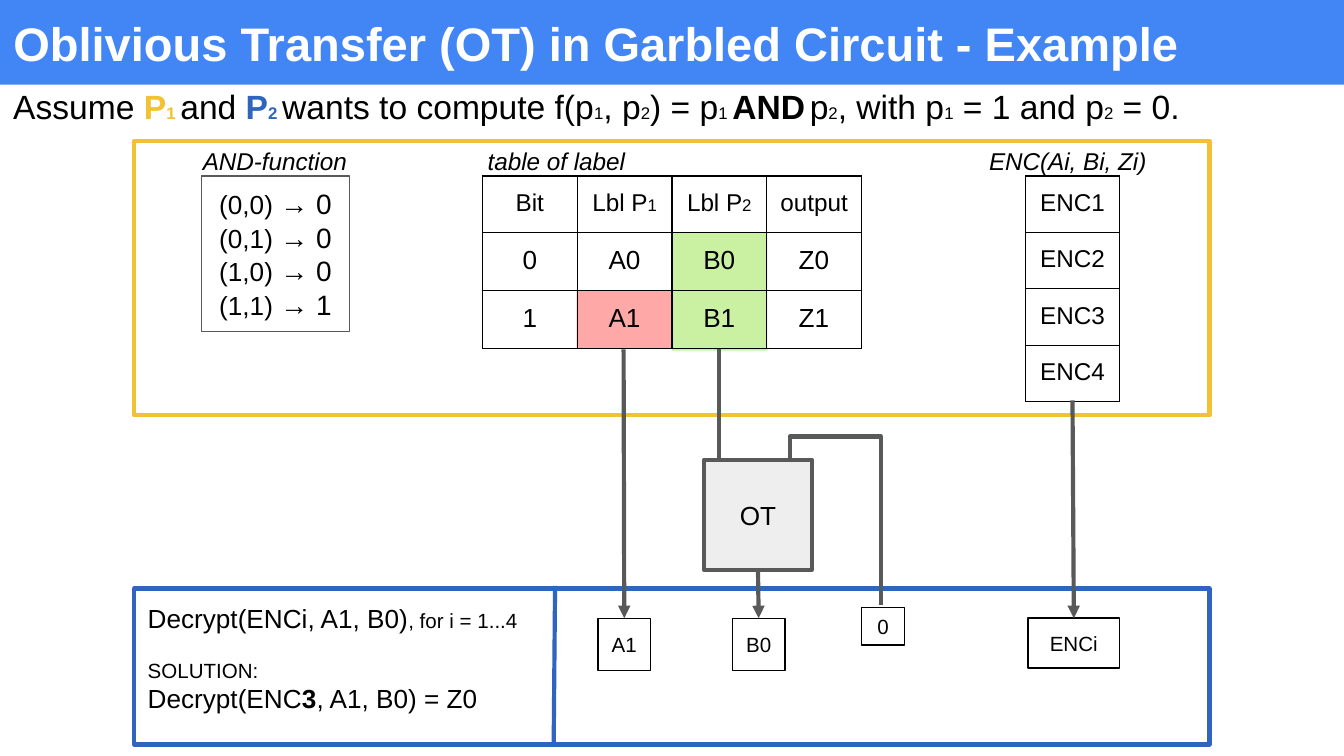
"""Build the slide on oblivious transfer in a garbled circuit."""
from typing import NamedTuple, Optional

from lxml.etree import SubElement as Sub
from pptx import Presentation
from pptx.dml.color import RGBColor
from pptx.enum.shapes import MSO_CONNECTOR as Link, MSO_SHAPE as Form
from pptx.enum.text import MSO_ANCHOR as Anchor, MSO_AUTO_SIZE as Auto, PP_ALIGN as Align
from pptx.oxml.ns import qn
from pptx.util import Inches, Pt

BLACK, GRAY, GOLD, BLUE = "000000", "595959", "F1C232", "2F65BE"


class Run(NamedTuple):
    text: str
    size: float = 14
    color: str = BLACK
    bold: bool = False
    slant: bool = False


class Box(NamedTuple):
    x: float
    y: float
    w: float
    h: float
    line: Optional[str] = None
    width: float = 0.75
    fill: Optional[str] = None
    alpha: int = 100
    rows: tuple = ()


class Grid(NamedTuple):
    x: float
    y: float
    wide: float
    tall: tuple
    cells: list


def hue(code: str) -> RGBColor:
    return RGBColor.from_string(code)


def style(font, run: Run) -> None:
    font.name, font.size = "Arial", Pt(run.size)
    font.bold, font.italic = run.bold, run.slant
    font.color.rgb = hue(run.color)


def write(frame, rows, align=Align.LEFT) -> None:
    frame.margin_left = frame.margin_right = Inches(0.1)
    frame.margin_top = frame.margin_bottom = Inches(0.1)
    for i, runs in enumerate(rows):
        para = frame.paragraphs[0] if i == 0 else frame.add_paragraph()
        para.alignment = align
        if len(runs) == 1:
            style(para.font, runs[0])
        for run in runs:
            part = para.add_run()
            part.text = run.text
            if len(runs) > 1:
                style(part.font, run)


def draw_box(slide, box: Box):
    shape = slide.shapes.add_shape(Form.RECTANGLE, *map(Inches, box[:4]))
    shape.shadow.inherit = False
    if box.fill:
        shape.fill.solid()
        shape.fill.fore_color.rgb = hue(box.fill)
        if box.alpha < 100:
            tint = shape.element.spPr.find(".//" + qn("a:srgbClr"))
            Sub(tint, qn("a:alpha"), val=str(box.alpha * 1000))
    else:
        shape.fill.background()
    if box.line:
        shape.line.color.rgb = hue(box.line)
        shape.line.width = Pt(box.width)
    else:
        shape.line.fill.background()
    if box.rows:
        frame = shape.text_frame
        frame.word_wrap = False
        frame.vertical_anchor = Anchor.MIDDLE
        write(frame, box.rows, Align.CENTER)
    return shape


def draw_text(slide, x: float, y: float, w: float, h: float, rows):
    frame = slide.shapes.add_textbox(*map(Inches, (x, y, w, h))).text_frame
    frame.word_wrap = True
    write(frame, rows)
    return frame


def draw_grid(slide, grid: Grid) -> None:
    count = len(grid.cells[0])
    size = (grid.x, grid.y, grid.wide * count, sum(grid.tall))
    table = slide.shapes.add_table(len(grid.tall), count, *map(Inches, size)).table
    table.first_row = table.horz_banding = False
    for col in table.columns:
        col.width = Inches(grid.wide)
    for row, tall, line in zip(table.rows, grid.tall, grid.cells):
        row.height = Inches(tall)
        for cell, runs in zip(row.cells, line):
            write(cell.text_frame, [runs], Align.CENTER)
            cell.margin_left = cell.margin_right = Inches(0.1)
            cell.margin_top = cell.margin_bottom = Inches(0.1)
            props = cell._tc.get_or_add_tcPr()
            for side in ("lnL", "lnR", "lnT", "lnB"):
                edge = Sub(props, qn("a:" + side), w=str(Pt(0.75)))
                Sub(Sub(edge, qn("a:solidFill")), qn("a:srgbClr"), val=BLACK)
            cell.fill.background()


def draw_line(slide, x: float, y: float, to_x: float, to_y: float,
              color: str = GRAY, arrow: bool = False, kind=Link.STRAIGHT):
    line = slide.shapes.add_connector(kind, *map(Inches, (x, y, to_x, to_y)))
    line.line.color.rgb = hue(color)
    line.line.width = Pt(2.25)
    props = line.element.spPr
    if arrow:
        Sub(props.find(qn("a:ln")), qn("a:tailEnd"), type="triangle")
    Sub(props, qn("a:effectLst"))
    return line


def draw_head(slide) -> None:
    title = slide.shapes.title
    title.left, title.top, title.width, title.height = map(Inches, (0, 0, 10, 0.63))
    title.fill.solid()
    title.fill.fore_color.rgb = hue("4285F4")
    frame = title.text_frame
    frame.auto_size, frame.word_wrap = Auto.NONE, True
    frame.vertical_anchor = Anchor.BOTTOM
    name = "Oblivious Transfer (OT) in Garbled Circuit - Example"
    write(frame, [[Run(name, 25.2, "FFFFFF", True)]])
    low = Run("1", 9), Run("2", 9)
    draw_text(slide, 0, 0.54, 10, 0.59, [[
        Run("Assume ", 18), Run("P", 18, GOLD, True), Run("1 ", 9, GOLD, True),
        Run("and ", 18), Run("P", 18, BLUE, True), Run("2 ", 9, BLUE, True),
        Run("wants to compute f(p", 18), low[0], Run(", p", 18), low[1],
        Run(") = p", 18), Run("1 ", 9), Run("AND", 18, bold=True), Run(" ", 9),
        Run("p", 18), low[1], Run(", with p", 18), low[0],
        Run(" = 1 and p", 18), low[1], Run(" = 0.", 18)]])


def draw_top(slide) -> None:
    logic = [[Run(f"({a},{b}) "), Run(f"→ {a & b}", 15)] for a in (0, 1) for b in (0, 1)]
    draw_box(slide, Box(1.5, 1.31, 1.1, 1.16, GRAY, rows=tuple(logic)))
    head = [[Run("Bit", 13)], [Run("Lbl P", 13), Run("1", 9)],
            [Run("Lbl P", 13), Run("2", 9)], [Run("output", 13)]]
    body = [[[Run(f"{kind}{bit}")] for kind in ("", "A", "B", "Z")] for bit in (0, 1)]
    draw_grid(slide, Grid(3.59, 1.31, 2.82 / 4, (0.29,) * 3, [head] + body))
    codes = [[[Run(f"ENC{i}", 13)]] for i in range(1, 5)]
    draw_grid(slide, Grid(7.63, 1.31, 0.7, (0.42,) * 4, codes))
    names = "\tAND-function\ttable of label\tENC(Ai, Bi, Zi)"
    frame = draw_text(slide, 0.92, 0.99, 9.08, 0.49, [[Run(names, 13, slant=True)]])
    props = frame.paragraphs[0]._p.get_or_add_pPr()
    tabs = Sub(props, qn("a:tabLst"))
    props.insert(0, tabs)
    for stop in (0.49, 2.61, 6.34):
        Sub(tabs, qn("a:tab"), pos=str(Inches(stop)), algn="l")


def draw_flow(slide) -> None:
    draw_box(slide, Box(1, 4.38, 8, 1.16, BLUE, 2.25))
    gate = draw_box(slide, Box(5.24, 3.42, 0.8, 0.82, GRAY, 2.25, "EEEEEE", rows=([Run("OT")],)))
    frame = draw_text(slide, 1, 4.38, 3.12, 1.04, [
        [Run("Decrypt(ENCi, A1, B0)"), Run(", for i = 1...4", 11)],
        [Run("SOLUTION:", 11)],
        [Run("Decrypt(ENC"), Run("3", bold=True), Run(", A1, B0) = Z0")]])
    frame.paragraphs[1].space_before = Pt(13)
    spots = {"A1": (4.45, 4.6, 0.39, 0.39), "B0": (5.45, 4.6, 0.39, 0.39),
             "0": (6.41, 4.52, 0.32, 0.28), "ENCi": (7.65, 4.6, 0.68, 0.37)}
    ends = {name: draw_box(slide, Box(*spot, BLACK, rows=([Run(name, 11)],)))
            for name, spot in spots.items()}
    for name, x, y in (("A1", 4.64, 2.6), ("ENCi", 7.98, 2.98), ("B0", 5.64, 4.24)):
        line = draw_line(slide, x, y, x, 4.6, arrow=True)
        line.end_connect(ends[name], 0)
        if name == "B0":
            line.begin_connect(gate, 2)
    draw_line(slide, 5.35, 2.6, 5.35, 3.41)
    bend = draw_line(slide, 5.67, 3.62, 6.76, 4.3, kind=Link.ELBOW)
    props = bend.element.spPr
    frame = props.find(qn("a:xfrm"))
    frame.set("rot", str(270 * 60000))
    frame.set("flipH", "1")
    shape = props.find(qn("a:prstGeom")).find(qn("a:avLst"))
    Sub(shape, qn("a:gd"), name="adj1", fmla="val -15300")
    draw_line(slide, 4.13, 4.36, 4.12, 5.53, BLUE)


def main() -> None:
    deck = Presentation()
    deck.slide_width, deck.slide_height = Inches(10), Inches(10 * 9 / 16)
    slide = deck.slides.add_slide(deck.slide_layouts[5])
    draw_box(slide, Box(4.29, 2.16, 0.71, 0.43, fill="FF0000", alpha=34))
    draw_box(slide, Box(5, 1.73, 0.71, 0.88, fill="A2E85C", alpha=57))
    draw_box(slide, Box(1, 1.05, 8, 2.04, GOLD, 2.25))
    draw_head(slide)
    draw_top(slide)
    draw_flow(slide)
    deck.save("out.pptx")


if __name__ == "__main__":
    main()
